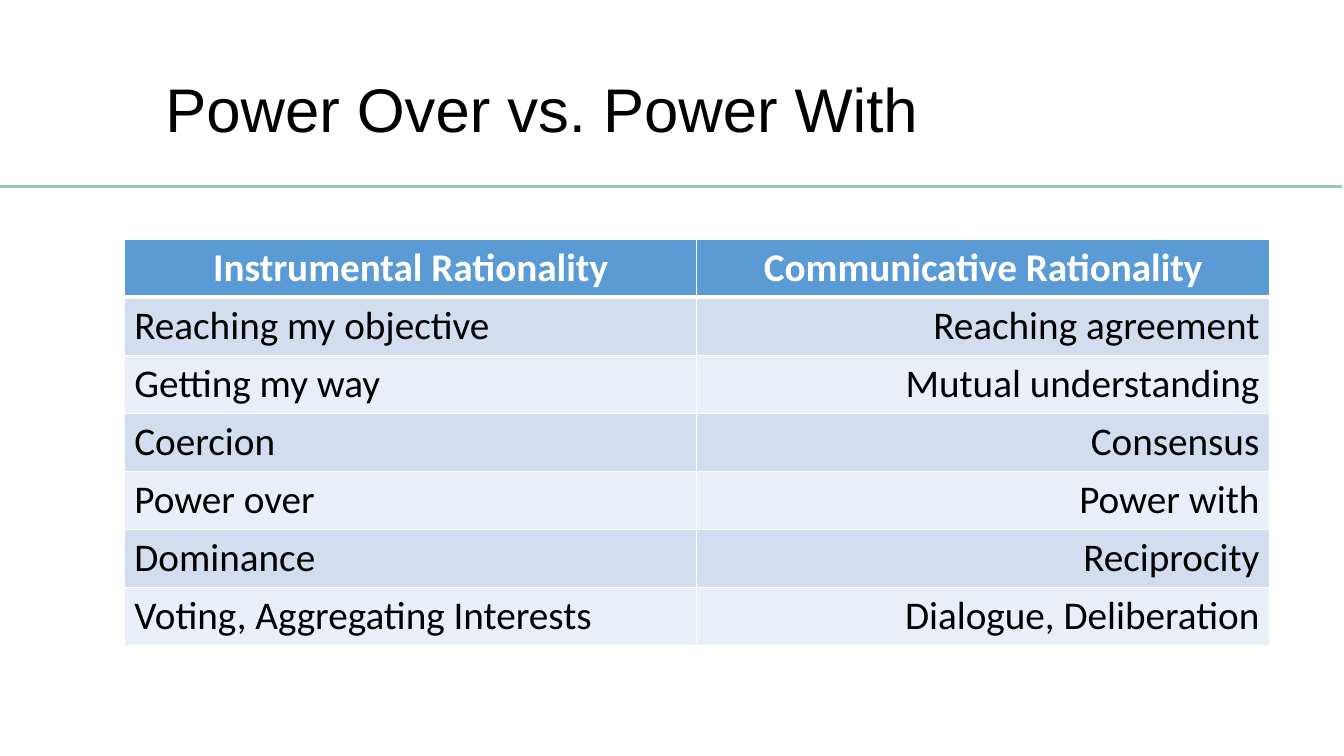
from dataclasses import dataclass

from lxml import etree
from pptx import Presentation
from pptx.dml.color import RGBColor
from pptx.enum.shapes import MSO_CONNECTOR
from pptx.enum.text import MSO_ANCHOR, MSO_AUTO_SIZE, PP_ALIGN
from pptx.oxml.ns import qn
from pptx.util import Pt

STRAIGHT = MSO_CONNECTOR.STRAIGHT
MIDDLE = MSO_ANCHOR.MIDDLE
NO_AUTOFIT = MSO_AUTO_SIZE.NONE
LEFT, CENTER, RIGHT = PP_ALIGN.LEFT, PP_ALIGN.CENTER, PP_ALIGN.RIGHT

HEADER_FILL = "5B9BD5"
BAND_FILLS = ("EAEFF7", "D2DEEF")
ROW_HEIGHT = 40.83
COLUMN_WIDTH = 409


@dataclass
class Contrast:
    instrumental: str
    communicative: str


CONTRASTS = [
    Contrast("Instrumental Rationality", "Communicative Rationality"),
    Contrast("Reaching my objective", "Reaching agreement"),
    Contrast("Getting my way", "Mutual understanding"),
    Contrast("Coercion", "Consensus"),
    Contrast("Power over", "Power with"),
    Contrast("Dominance", "Reciprocity"),
    Contrast("Voting, Aggregating Interests", "Dialogue, Deliberation"),
]


def rgb(value: str) -> RGBColor:
    return RGBColor.from_string(value)


def format_text(p, font: str, size: float, color: str, align, bold: bool = False) -> None:
    p.alignment = align
    for r in p.runs:
        r.font.name = font
        r.font.size = Pt(size)
        r.font.bold = bold
        r.font.color.rgb = rgb(color)


def add_border(cell, side: str, width: float, color: str) -> None:
    tcPr = cell._tc.get_or_add_tcPr()
    ln = etree.SubElement(tcPr, qn(f"a:ln{side}"), w=str(Pt(width)))
    fill = etree.SubElement(ln, qn("a:solidFill"))
    etree.SubElement(fill, qn("a:srgbClr"), val=color)


def fill_cell(cell, text: str, row: int, align) -> None:
    header = row == 0
    cell.text = text
    format_text(cell.text_frame.paragraphs[0], "Calibri", 28,
                "FFFFFF" if header else "000000",
                CENTER if header else align, header)
    widths = {"L": 1, "R": 1, "T": 3 if row == 1 else 1, "B": 3 if header else 1}
    for side, width in widths.items():
        add_border(cell, side, width, "FFFFFF")
    cell.fill.solid()
    cell.fill.fore_color.rgb = rgb(HEADER_FILL if header else BAND_FILLS[row % 2])


def add_rule(s) -> None:
    rule = s.shapes.add_connector(STRAIGHT, Pt(-1.2), Pt(133.2), Pt(958.4), Pt(133.2))
    rule.line.color.rgb = rgb("9DC0C4")
    rule.line.width = Pt(2)
    etree.SubElement(rule._element.spPr, qn("a:effectLst"))


def add_title(s) -> None:
    sp = s.shapes.title
    sp.left, sp.top, sp.width, sp.height = Pt(110.9), Pt(28.8), Pt(783.4), Pt(103.7)
    tf = sp.text_frame
    tf.text = "Power Over vs. Power With"
    tf.word_wrap = True
    tf.auto_size = NO_AUTOFIT
    tf.vertical_anchor = MIDDLE
    p = tf.paragraphs[0]
    p.line_spacing = 0.9
    format_text(p, "Arial", 44, "000000", LEFT)


def add_contrast_table(s, contrasts: list[Contrast]) -> None:
    count = len(contrasts)
    table = s.shapes.add_table(count, 2, Pt(88.8), Pt(170.8),
                               Pt(2 * COLUMN_WIDTH), Pt(count * ROW_HEIGHT)).table
    for column in table.columns:
        column.width = Pt(COLUMN_WIDTH)
    for i, contrast in enumerate(contrasts):
        table.rows[i].height = Pt(ROW_HEIGHT)
        fill_cell(table.cell(i, 0), contrast.instrumental, i, LEFT)
        fill_cell(table.cell(i, 1), contrast.communicative, i, RIGHT)


def main() -> None:
    prs = Presentation()
    prs.slide_width, prs.slide_height = Pt(960), Pt(540)
    s = prs.slides.add_slide(prs.slide_layouts[5])
    add_rule(s)
    add_title(s)
    add_contrast_table(s, CONTRASTS)
    prs.save("out.pptx")


if __name__ == "__main__":
    main()
